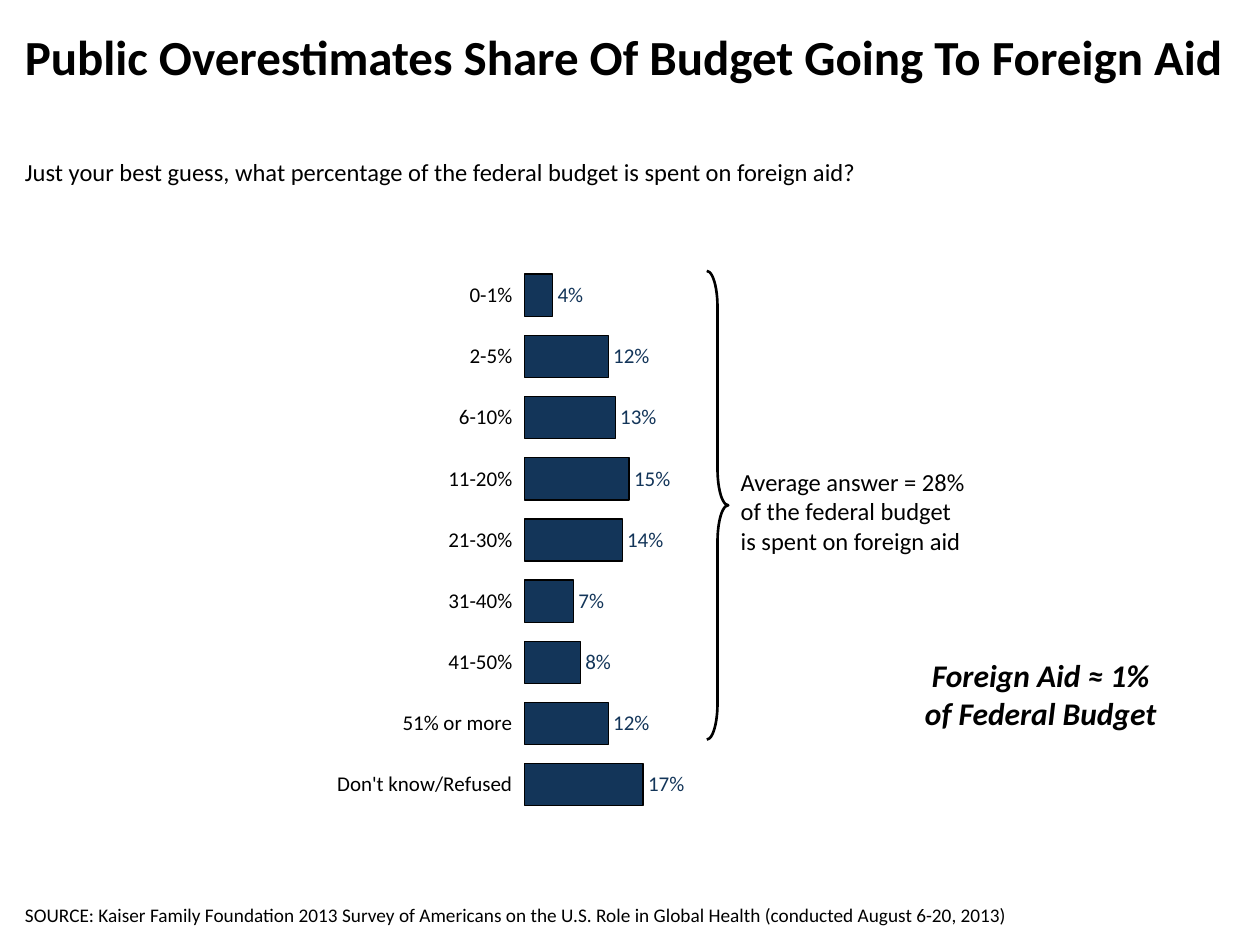
from dataclasses import dataclass

from lxml import etree
from pptx import Presentation
from pptx.chart.data import CategoryChartData
from pptx.dml.color import RGBColor
from pptx.enum.chart import XL_CHART_TYPE as ChartType
from pptx.enum.chart import XL_LABEL_POSITION as LabelPosition
from pptx.enum.chart import XL_TICK_LABEL_POSITION as TickLabels
from pptx.enum.chart import XL_TICK_MARK as TickMark
from pptx.enum.shapes import MSO_SHAPE as Shape
from pptx.enum.text import MSO_ANCHOR as Anchor
from pptx.enum.text import PP_ALIGN as Align
from pptx.oxml.ns import qn
from pptx.util import Inches, Pt


@dataclass(frozen=True)
class Theme:
    """Colours, font and type sizes of the deck."""
    ink: RGBColor = RGBColor(0, 0, 0)
    bar: RGBColor = RGBColor(0x13, 0x35, 0x59)
    font: str = "Calibri"
    title: int = 28
    callout: int = 18
    body: int = 14
    chart: int = 12
    source: int = 11


THEME = Theme()

ANSWERS = {
    "0-1%": 0.04,
    "2-5%": 0.12,
    "6-10%": 0.13,
    "11-20%": 0.15,
    "21-30%": 0.14,
    "31-40%": 0.07,
    "41-50%": 0.08,
    "51% or more": 0.12,
    "Don't know/Refused": 0.17,
}


def style_font(font, size, color=THEME.ink, bold=False, italic=False):
    """Apply the theme font with a size, colour and emphasis."""
    font.name = THEME.font
    font.size = Pt(size)
    font.color.rgb = color
    font.bold = bold
    font.italic = italic


def add_text(page, box, lines, size, anchor=Anchor.TOP, align=Align.LEFT,
             wrap=True, bold=False, italic=False):
    """Place a text box with one paragraph per line."""
    frame = page.shapes.add_textbox(*map(Inches, box)).text_frame
    frame.word_wrap = wrap
    frame.vertical_anchor = anchor
    for index, line in enumerate(lines):
        para = frame.add_paragraph() if index else frame.paragraphs[0]
        para.alignment = align
        span = para.add_run()
        span.text = line
        style_font(span.font, size, bold=bold, italic=italic)


def set_plot_area(chart, box):
    """Fix the inner plot area as fractions of the chart."""
    plot_area = chart._chartSpace.chart.plotArea
    for old in plot_area.findall(qn("c:layout")):
        plot_area.remove(old)
    layout = etree.Element(qn("c:layout"))
    manual = etree.SubElement(layout, qn("c:manualLayout"))
    settings = [("layoutTarget", "inner"), ("xMode", "edge"), ("yMode", "edge")]
    settings += zip("xywh", map(str, box))
    for name, value in settings:
        etree.SubElement(manual, qn(f"c:{name}")).set("val", value)
    plot_area.insert(0, layout)


def add_answer_chart(page, box):
    """Draw the share of respondents giving each answer."""
    data = CategoryChartData(number_format="0%")
    data.categories = list(ANSWERS)
    data.add_series("Series 1", list(ANSWERS.values()))
    chart = page.shapes.add_chart(
        ChartType.BAR_CLUSTERED, *map(Inches, box), data).chart
    style_font(chart.font, THEME.chart)
    chart.has_legend = False
    chart.has_title = False
    set_plot_area(chart, (0.33, 0.03, 0.65, 0.93))

    categories = chart.category_axis
    categories.reverse_order = True
    categories.major_tick_mark = TickMark.OUTSIDE
    categories.tick_label_position = TickLabels.LOW
    categories.format.line.fill.background()
    style_font(categories.tick_labels.font, THEME.chart)

    values = chart.value_axis
    values.minimum_scale, values.maximum_scale = 0, 1
    values.has_major_gridlines = False
    values.visible = False

    plot = chart.plots[0]
    plot.gap_width = 45
    plot.vary_by_categories = False
    bars = plot.series[0]
    bars.format.fill.solid()
    bars.format.fill.fore_color.rgb = THEME.bar
    bars.format.line.color.rgb = THEME.ink
    bars.format.line.width = Pt(0.75)
    labels = bars.data_labels
    labels.show_value = True
    labels.position = LabelPosition.OUTSIDE_END
    labels.number_format = "0%"
    labels.number_format_is_linked = False
    style_font(labels.font, THEME.chart, THEME.bar)


def add_average_note(page, box):
    """Draw the brace at the left of the box and its note, centred beside it."""
    left, top, width, height = box
    brace_width, note_height = 0.17, 0.81
    brace = page.shapes.add_shape(
        Shape.RIGHT_BRACE, *map(Inches, (left, top, brace_width, height)))
    brace.shadow.inherit = False
    brace.adjustments[0] = 1.69
    brace.adjustments[1] = 0.5
    brace.fill.background()
    brace.line.color.rgb = THEME.ink
    brace.line.width = Pt(1.5)
    note_box = (left + brace_width, top + (height - note_height) / 2 + 0.05,
                width - brace_width, note_height)
    add_text(page, note_box,
             ["Average answer = 28% of the federal budget is spent on foreign aid"],
             THEME.body)


def add_heading(page, box):
    """Place the title and the survey question below it."""
    left, top, width, height = box
    add_text(page, (left, top, width, 1),
             ["Public Overestimates Share Of Budget Going To Foreign Aid"],
             THEME.title, bold=True)
    add_text(page, (left, top + height - 0.6, width, 0.6),
             ["Just your best guess, what percentage of the federal budget "
              "is spent on foreign aid?"], THEME.body)


def add_callout(page, box):
    """Place the actual share of the budget."""
    add_text(page, box, ["Foreign Aid ≈ 1%", "of Federal Budget"], THEME.callout,
             align=Align.CENTER, wrap=False, bold=True, italic=True)


def add_source(page, box):
    """Place the source line at the foot of the page."""
    add_text(page, box,
             ["SOURCE: Kaiser Family Foundation 2013 Survey of Americans on the "
              "U.S. Role in Global Health (conducted August 6-20, 2013)"],
             THEME.source, anchor=Anchor.BOTTOM)


def main():
    """Build the slide and save the deck."""
    deck = Presentation()
    deck.slide_width, deck.slide_height = Inches(10), Inches(7.5)
    page = deck.slides.add_slide(deck.slide_layouts[6])
    add_answer_chart(page, (1.36, 1.96, 8.5, 4.7))
    add_source(page, (0.1, 6.8, 9.1, 0.6))
    add_heading(page, (0.1, 0.16, 9.8, 1.64))
    add_average_note(page, (5.61, 2.15, 2.16, 3.72))
    add_callout(page, (7.23, 5.16, 2.06, 0.71))
    deck.save("out.pptx")


if __name__ == "__main__":
    main()
